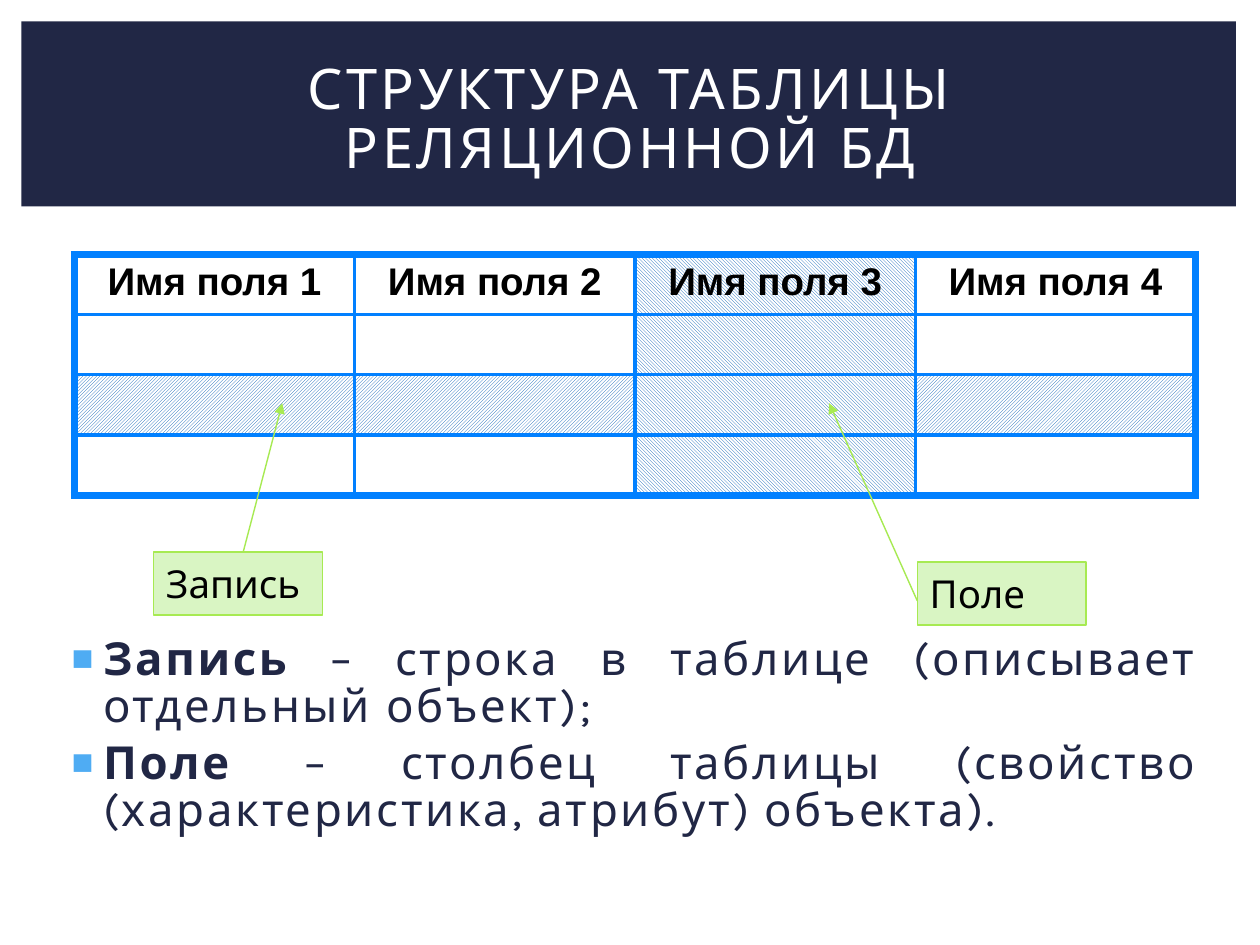
"""Build a slide on the structure of a relational database table."""
from dataclasses import dataclass

from lxml.etree import SubElement
from pptx import Presentation
from pptx.dml.color import RGBColor
from pptx.enum.dml import MSO_PATTERN
from pptx.enum.shapes import MSO_CONNECTOR, MSO_SHAPE
from pptx.enum.text import MSO_ANCHOR, PP_ALIGN
from pptx.oxml.ns import qn
from pptx.util import Pt

COLORS = {
    "navy": "212745", "white": "FFFFFF", "black": "000000", "bullet": "4FACF3",
    "grid": "0180FF", "hatch": "005AB4", "label": "D9F5C3", "accent": "A7EA52",
}
FONT = "Karla"
ROWS, COLS = 4, 4
RECORD_ROW, FIELD_COL = 2, 2
COL_W, ROW_H = 160.2, 34.4
THIN, THICK = 2.25, 4.5


@dataclass
class Label:
    text: str
    left: float
    top: float
    start: tuple[float, float]
    tip: tuple[float, float]


@dataclass
class Definition:
    term: str
    meaning: str


LABELS = [
    Label("Запись", 87.8, 315.4, (139, 315.4), (161.3, 230.4)),
    Label("Поле", 524.2, 321.1, (524.2, 343.4), (473.8, 230.4)),
]
DEFINITIONS = [
    Definition("Запись", " – строка в таблице (описывает отдельный объект);"),
    Definition("Поле", " – столбец таблицы (свойство (характеристика, атрибут) объекта)."),
]


def rgb(name: str) -> RGBColor:
    return RGBColor.from_string(COLORS[name])


def add_run(p, text: str, size: float, color: str, font: str = FONT,
            bold: bool = False, spacing: float = 0) -> None:
    r = p.add_run()
    r.text = text
    r.font.size, r.font.name, r.font.bold = Pt(size), font, bold
    r.font.color.rgb = rgb(color)
    if spacing:
        r.font._element.set("spc", str(int(spacing * 100)))


def add_box(s, left: float, top: float, width: float, height: float, fill: str):
    sp = s.shapes.add_shape(MSO_SHAPE.RECTANGLE, Pt(left), Pt(top), Pt(width), Pt(height))
    sp.shadow.inherit = False
    sp.fill.solid()
    sp.fill.fore_color.rgb = rgb(fill)
    sp.line.fill.background()
    return sp


def add_title(s, text: str) -> None:
    sp = s.shapes.title
    sp.left, sp.top, sp.width, sp.height = Pt(30.2), Pt(28.1), Pt(660.2), Pt(82.8)
    tf = sp.text_frame
    tf.word_wrap, tf.vertical_anchor = True, MSO_ANCHOR.MIDDLE
    p = tf.paragraphs[0]
    p.alignment, p.line_spacing = PP_ALIGN.CENTER, 0.88
    add_run(p, text, 32, "white", spacing=2)


def add_border(cell, side: str, width: float) -> None:
    ln = SubElement(cell._tc.get_or_add_tcPr(), qn(f"a:ln{side}"), w=str(Pt(width)))
    fill = SubElement(ln, qn("a:solidFill"))
    SubElement(fill, qn("a:srgbClr"), val=COLORS["grid"])


def fill_cell(cell, row: int, col: int) -> None:
    if col != FIELD_COL and row != RECORD_ROW:
        cell.fill.background()
        return
    cell.fill.patterned()
    cell.fill.pattern = (MSO_PATTERN.LIGHT_DOWNWARD_DIAGONAL if col == FIELD_COL
                         else MSO_PATTERN.LIGHT_UPWARD_DIAGONAL)
    cell.fill.fore_color.rgb = rgb("hatch")
    cell.fill.back_color.rgb = rgb("white")


def add_field_table(s) -> None:
    table = s.shapes.add_table(ROWS, COLS, Pt(42.5), Pt(145.4),
                               Pt(COLS * COL_W), Pt(ROWS * ROW_H)).table
    table.first_row = table.horz_banding = False
    for column in table.columns:
        column.width = Pt(COL_W)
    for i, row in enumerate(table.rows):
        row.height = Pt(ROW_H)
        for j, cell in enumerate(row.cells):
            outer = {"L": j == 0, "R": j == COLS - 1, "T": i == 0, "B": i == ROWS - 1}
            for side, is_outer in outer.items():
                add_border(cell, side, THICK if is_outer else THIN)
            fill_cell(cell, i, j)
            if i == 0:
                p = cell.text_frame.paragraphs[0]
                p.alignment = PP_ALIGN.CENTER
                add_run(p, f"Имя поля {j + 1}", 22, "black", "Arial", True)


def add_label(s, label: Label) -> None:
    sp = add_box(s, label.left, label.top, 96.5, 36, "label")
    sp.line.color.rgb, sp.line.width = rgb("accent"), Pt(0.79)
    tf = sp.text_frame
    tf.word_wrap, tf.vertical_anchor = True, MSO_ANCHOR.MIDDLE
    tf.paragraphs[0].alignment = PP_ALIGN.LEFT
    add_run(tf.paragraphs[0], label.text, 22, "black")


def add_arrow(s, label: Label) -> None:
    ends = [Pt(v) for v in (*label.start, *label.tip)]
    cx = s.shapes.add_connector(MSO_CONNECTOR.STRAIGHT, *ends)
    cx.line.color.rgb, cx.line.width = rgb("accent"), Pt(0.79)
    SubElement(cx.line._get_or_add_ln(), qn("a:tailEnd"), type="triangle")
    SubElement(cx._element.spPr, qn("a:effectLst"))


def add_bullet(p) -> None:
    pPr = p._p.get_or_add_pPr()
    pPr.set("marL", str(Pt(21.6)))
    pPr.set("indent", str(Pt(-18)))
    color = SubElement(pPr, qn("a:buClr"))
    SubElement(color, qn("a:srgbClr"), val=COLORS["bullet"])
    SubElement(pPr, qn("a:buSzPct"), val="80000")
    SubElement(pPr, qn("a:buFont"), typeface="Arial")
    SubElement(pPr, qn("a:buChar"), char="■")


def add_definitions(s, definitions: list[Definition]) -> None:
    tf = s.shapes.add_textbox(Pt(30.2), Pt(360.7), Pt(661.7), Pt(121.7)).text_frame
    tf.word_wrap = True
    for i, item in enumerate(definitions):
        p = tf.add_paragraph() if i else tf.paragraphs[0]
        p.alignment, p.line_spacing, p.space_before = PP_ALIGN.JUSTIFY, 0.87, Pt(5.2)
        add_bullet(p)
        add_run(p, item.term, 26, "navy", bold=True, spacing=1.5)
        add_run(p, item.meaning, 26, "navy", spacing=1.5)


def main() -> None:
    prs = Presentation()
    prs.slide_width, prs.slide_height = Pt(720), Pt(540)
    s = prs.slides.add_slide(prs.slide_layouts[5])
    banner = add_box(s, 12.2, 12.2, 694.1, 105.8, "navy")
    s.shapes.title._element.addprevious(banner._element)
    add_title(s, "СТРУКТУРА ТАБЛИЦЫ РЕЛЯЦИОННОЙ БД")
    add_definitions(s, DEFINITIONS)
    add_field_table(s)
    for label in LABELS:
        add_label(s, label)
    for label in LABELS:
        add_arrow(s, label)
    prs.save("out.pptx")


if __name__ == "__main__":
    main()
